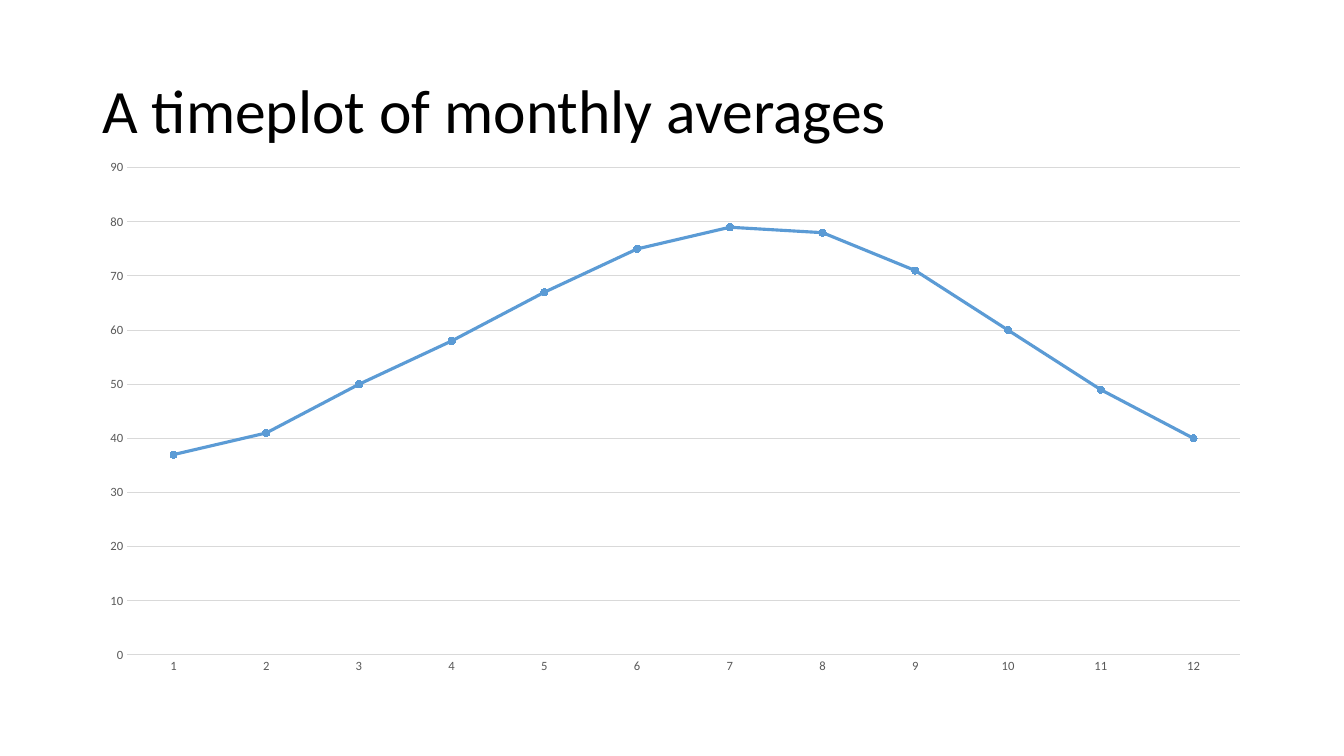
import pptx
import pptx.chart.data
import pptx.dml.color
import pptx.enum.chart
import pptx.enum.text
import pptx.util
import lxml.etree

Pt = pptx.util.Pt
CHART_ENUM = pptx.enum.chart
CHART_NS = "http://schemas.openxmlformats.org/drawingml/2006/chart"

MONTHLY_AVERAGES = [37, 41, 50, 58, 67, 75, 79, 78, 71, 60, 49, 40]


def color(hex_value):
    return pptx.dml.color.RGBColor.from_string(hex_value)


def set_values(target, values):
    for name, value in values.items():
        setattr(target, name, value)


class SlideBuilder:
    """Holds the style and the current slide."""

    font_name = "Calibri"
    title_color = "000000"
    label_color = "595959"
    rule_color = "D9D9D9"
    series_color = "5B9BD5"

    def __init__(self, presentation):
        self.slide = presentation.slides.add_slide(presentation.slide_layouts[6])

    def style_font(self, font, size, hex_value):
        set_values(font, {"name": self.font_name, "size": Pt(size)})
        font.color.rgb = color(hex_value)

    def style_line(self, line, width, hex_value):
        line.width = Pt(width)
        line.color.rgb = color(hex_value)

    def title(self, text, left, top, width, height):
        shape = self.slide.shapes.add_textbox(Pt(left), Pt(top), Pt(width), Pt(height))
        set_values(shape.text_frame, {
            "word_wrap": True,
            "vertical_anchor": pptx.enum.text.MSO_ANCHOR.MIDDLE,
        })
        paragraph = shape.text_frame.paragraphs[0]
        paragraph.line_spacing = 0.9
        run = paragraph.add_run()
        run.text = text
        self.style_font(run.font, 44, self.title_color)

    def line_chart(self, categories, values, left, top, width, height, plot_area):
        data = pptx.chart.data.CategoryChartData()
        data.categories = categories
        data.add_series("Series 1", values)
        chart = self.slide.shapes.add_chart(
            CHART_ENUM.XL_CHART_TYPE.LINE_MARKERS,
            Pt(left), Pt(top), Pt(width), Pt(height), data).chart
        set_values(chart, {"has_legend": False, "has_title": False})
        self.style_font(chart.font, 10, self.title_color)
        chart.plots[0].vary_by_categories = False
        self.style_axes(chart)
        self.style_series(chart.plots[0].series[0])
        self.place_plot(chart, plot_area)

    def style_axes(self, chart):
        no_tick = CHART_ENUM.XL_TICK_MARK.NONE
        for axis in (chart.category_axis, chart.value_axis):
            set_values(axis, {"major_tick_mark": no_tick, "minor_tick_mark": no_tick})
            self.style_font(axis.tick_labels.font, 9, self.label_color)
        self.style_line(chart.category_axis.format.line, 0.75, self.rule_color)

        value_axis = chart.value_axis
        set_values(value_axis, {
            "minimum_scale": 0, "maximum_scale": 90, "major_unit": 10,
            "has_major_gridlines": True,
        })
        value_axis.format.line.fill.background()
        self.style_line(value_axis.major_gridlines.format.line, 0.75, self.rule_color)

    def style_series(self, series):
        series.smooth = False
        self.style_line(series.format.line, 2.25, self.series_color)
        marker = series.marker
        set_values(marker, {"style": CHART_ENUM.XL_MARKER_STYLE.CIRCLE, "size": 5})
        marker.format.fill.solid()
        marker.format.fill.fore_color.rgb = color(self.series_color)
        self.style_line(marker.format.line, 0.75, self.series_color)

    def place_plot(self, chart, plot_area):
        """Fix the inner plot area as fractions of the chart."""
        plot_element = chart.plots[0]._element.getparent()
        for old_layout in plot_element.findall(f"{{{CHART_NS}}}layout"):
            plot_element.remove(old_layout)
        layout = lxml.etree.Element(f"{{{CHART_NS}}}layout")
        manual = lxml.etree.SubElement(layout, f"{{{CHART_NS}}}manualLayout")
        settings = {"layoutTarget": "inner", "xMode": "edge", "yMode": "edge"}
        settings.update(zip("xywh", plot_area))
        for tag, value in settings.items():
            lxml.etree.SubElement(manual, f"{{{CHART_NS}}}{tag}", val=str(value))
        plot_element.insert(0, layout)


def main():
    presentation = pptx.Presentation()
    set_values(presentation, {"slide_width": Pt(960), "slide_height": Pt(540)})
    builder = SlideBuilder(presentation)

    # Chart under the title, sharing its margins
    left, width = 66, 828
    months = [str(month) for month in range(1, 13)]
    builder.line_chart(months, MONTHLY_AVERAGES, left, 104.5, width, 382.5,
                       plot_area=(0.03, 0.04, 0.96, 0.91))

    # Title
    builder.title("A timeplot of monthly averages", left, 28.75, width, 104.4)

    presentation.save("out.pptx")


if __name__ == "__main__":
    main()
